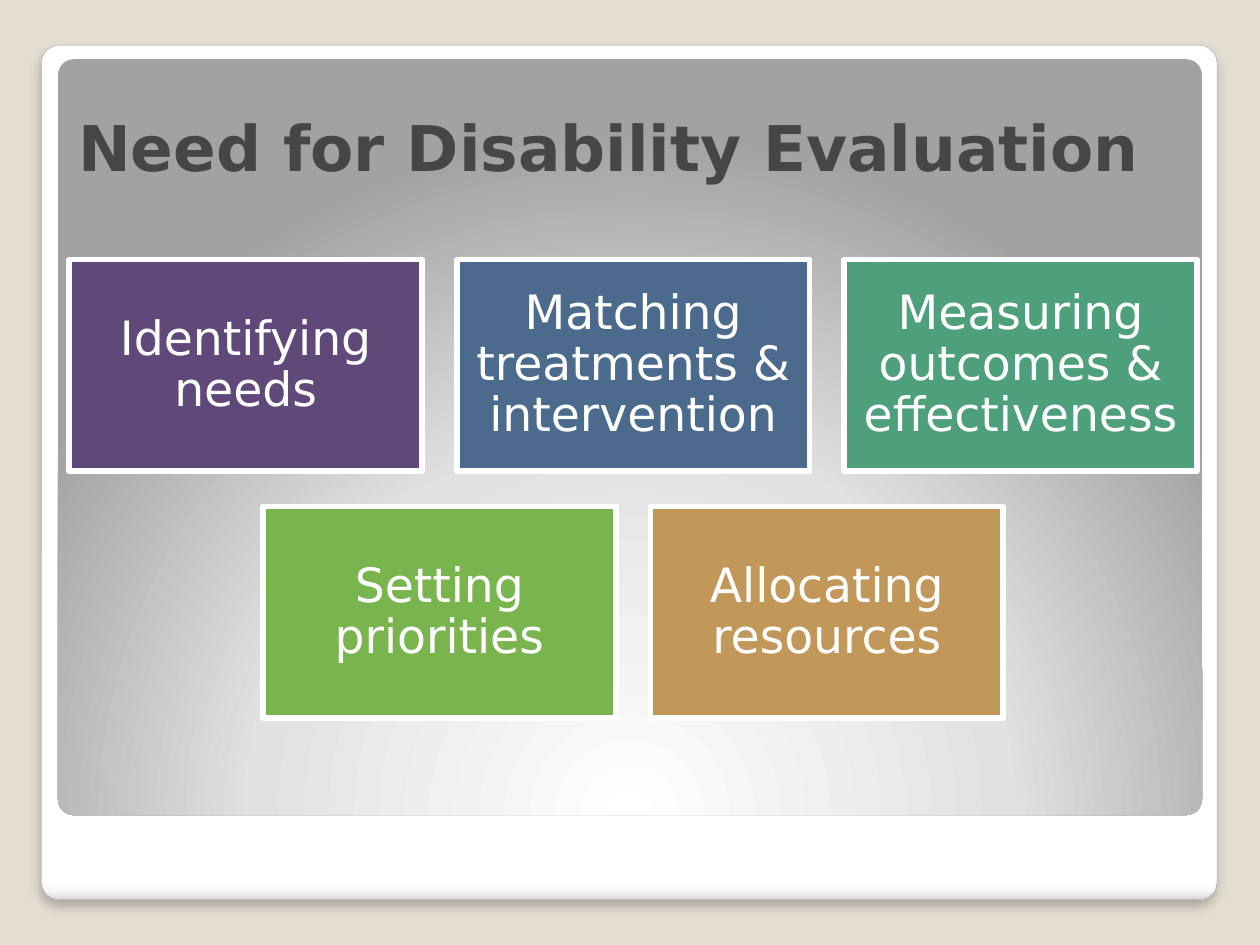
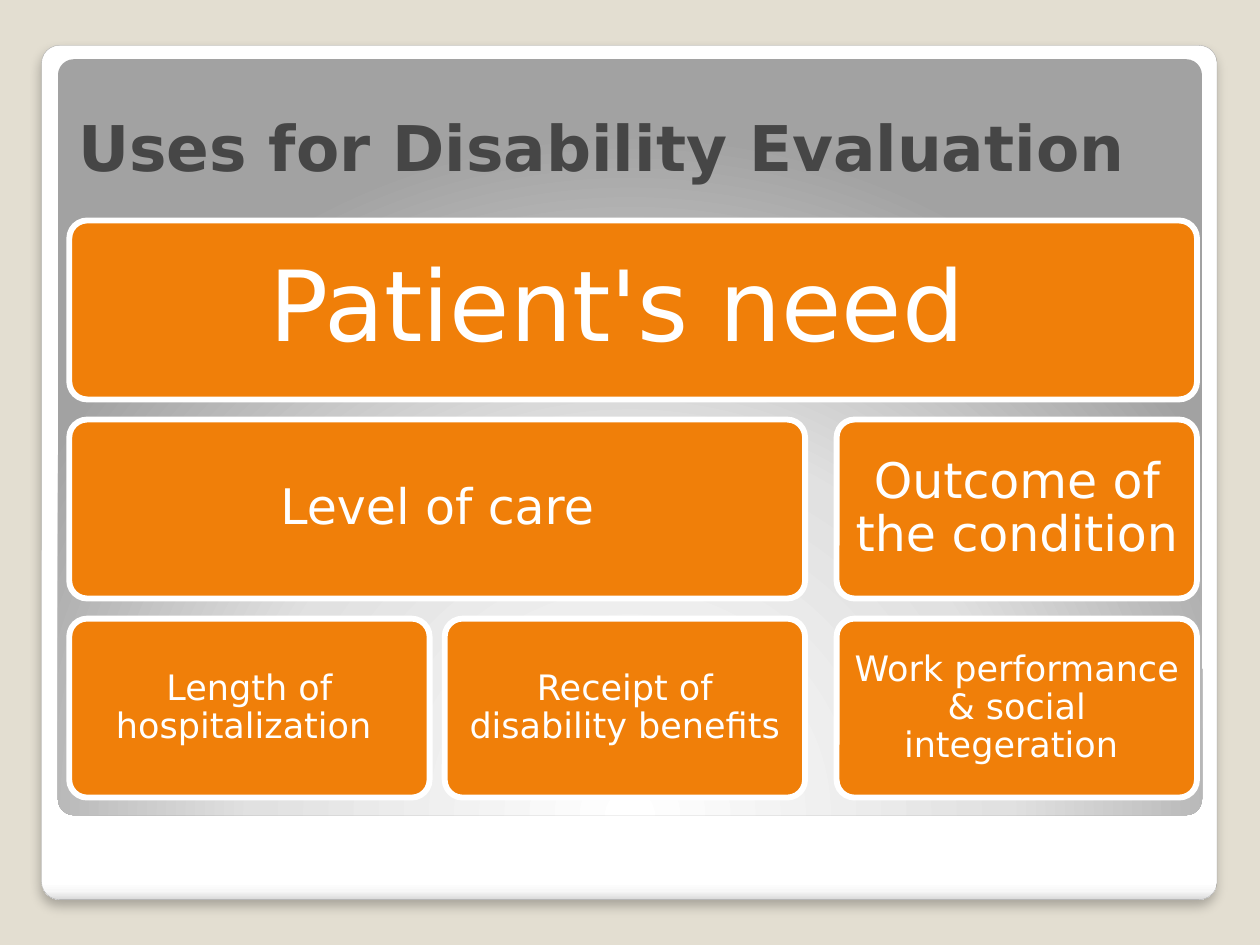
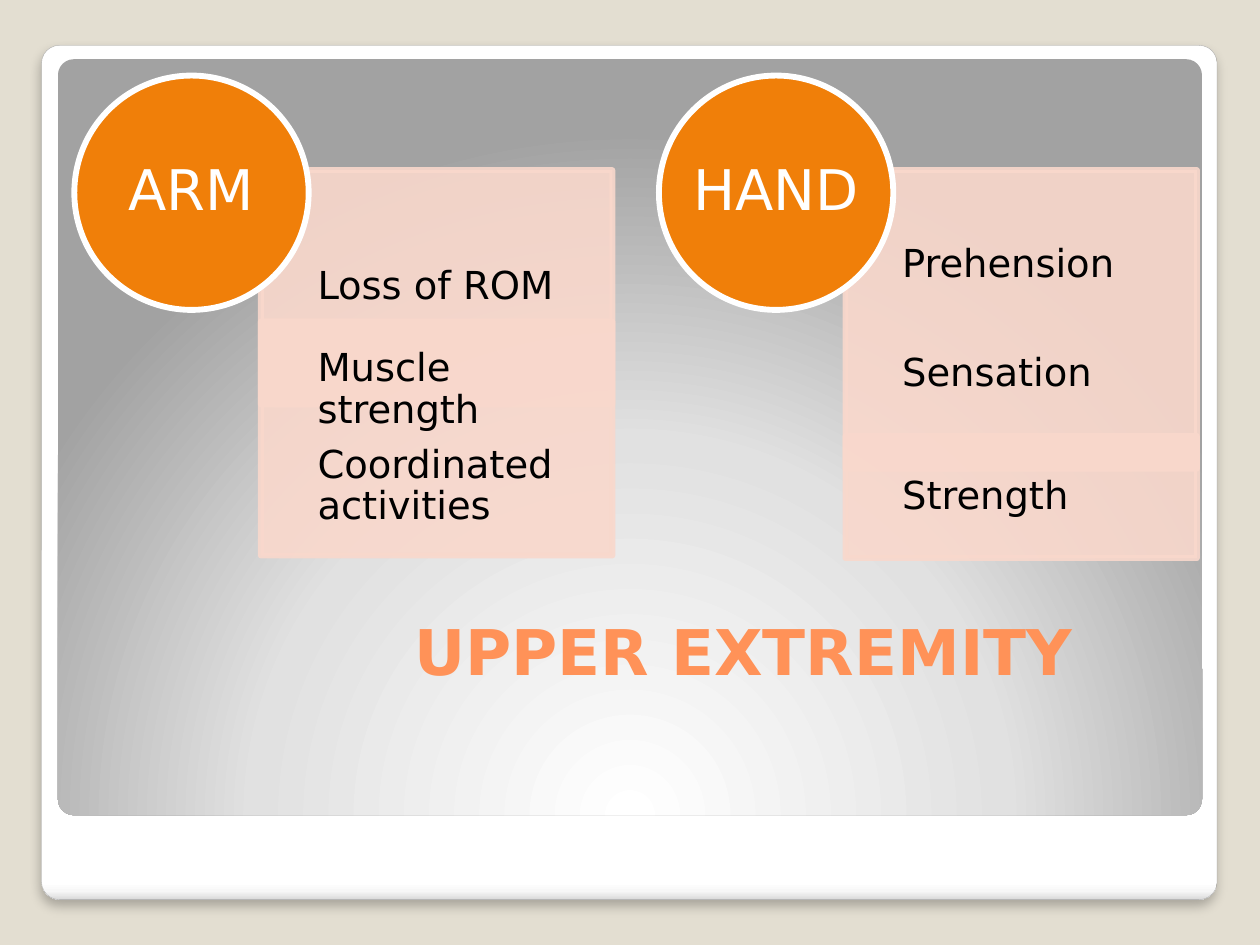
from lxml.etree import SubElement
from pptx import Presentation
from pptx.dml.color import RGBColor
from pptx.enum.shapes import MSO_SHAPE
from pptx.enum.text import MSO_ANCHOR, PP_ALIGN
from pptx.oxml import parse_xml
from pptx.oxml.ns import nsdecls, qn
from pptx.util import Inches, Pt

# Shared look
FONT = "DejaVu Sans"
SAND, WHITE, BLACK, GREY = "E3DED1", "FFFFFF", "000000", "464646"
ORANGE, PEACH, PINK = "F07F09", "FF9258", "F9D8CC"
EDGE = 3.35
LEFT = 0.55
HEAD = (LEFT, 0.33, 8.95, 1.15)

# Slide 1: rows of boxes
NEEDS = [
    [("Identifying needs", "604878"),
     ("Matching treatments & intervention", "4B6A8C"),
     ("Measuring outcomes & effectiveness", "4DA07B")],
    [("Setting priorities", "7AB44F"),
     ("Allocating resources", "C19859")],
]

# Slide 2: text, row, column, columns spanned
USES = [
    ("Patient's need ", 0, 0, 3),
    ("Level of care", 1, 0, 2),
    ("Length of hospitalization ", 2, 0, 1),
    ("Receipt of disability benefits", 2, 1, 1),
    ("Outcome of the condition", 1, 2, 1),
    ("Work performance & social integeration ", 2, 2, 1),
]
TIERS = [(56, 0.19), (28, 0.08), (20, 0.04)]  # text size, inset

# Slide 3: limb, then panels of top, height, space after, lines
LIMBS = [
    ("ARM", [(1.35, 1.86, 7.7, ["Loss of ROM"]),
             (2.55, 1.86, 7.7, ["Muscle strength", "Coordinated activities"])]),
    ("HAND", [(1.35, 2.37, 38.5, ["Prehension", "Sensation"]),
              (3.46, 0.97, 7.7, ["Strength"])]),
]


def tint(fill, code, alpha=100):
    fill.solid()
    fill.fore_color.rgb = RGBColor.from_string(code)
    if alpha < 100:
        node = fill._xPr.find(qn("a:solidFill"))[0]
        SubElement(node, qn("a:alpha"), val=str(alpha * 1000))


def blend(shape, stops, way):
    marks = "".join(f'<a:gs pos="{pos * 1000}"><a:srgbClr val="{code}"/></a:gs>'
                    for pos, code in stops)
    grad = parse_xml(f'<a:gradFill {nsdecls("a")} rotWithShape="1">'
                     f'<a:gsLst>{marks}</a:gsLst>{way}</a:gradFill>')
    shape._element.spPr.insert(2, grad)


def write(shape, lines, size, color, align=PP_ALIGN.CENTER, inset=(0, 0, 0, 0),
          bold=False, anchor=MSO_ANCHOR.MIDDLE, wrap=True, gap=None, pitch=0.9):
    frame = shape.text_frame
    frame.word_wrap = wrap
    frame.vertical_anchor = anchor
    (frame.margin_left, frame.margin_top,
     frame.margin_right, frame.margin_bottom) = map(Inches, inset)
    for i, line in enumerate(lines):
        para = frame.add_paragraph() if i else frame.paragraphs[0]
        para.alignment = align
        para.line_spacing = pitch
        last = i == len(lines) - 1
        para.space_after = Pt(size * 0.35 if last or gap is None else gap)
        run = para.add_run()
        run.text = line
        font = run.font
        font.name, font.size, font.bold = FONT, Pt(size), bold
        tint(font.fill, color)


def block(slide, kind, box, fill=None, line=None, width=EDGE, alpha=100, curve=None):
    shape = slide.shapes.add_shape(kind, *map(Inches, box))
    shape.shadow.inherit = False
    if curve is not None:
        shape.adjustments[0] = curve
    if fill:
        tint(shape.fill, fill, alpha)
    if line:
        tint(shape.line.fill, line, alpha)
        shape.line.width = Pt(width)
    else:
        shape.line.fill.background()
    return shape


def start(deck, title, box=HEAD, color=GREY):
    slide = deck.slides.add_slide(deck.slide_layouts[6])
    tint(slide.background.fill, SAND)
    # White card with a soft shadow
    card = block(slide, MSO_SHAPE.ROUNDED_RECTANGLE, (0.33, 0.36, 9.33, 6.78),
                 line="A4A4A4", width=0.16, curve=0.021)
    blend(card, [(0, WHITE), (98, WHITE), (99, "F7F7F7"), (100, "DADADA")],
          '<a:lin ang="5400000" scaled="0"/>')
    glow = SubElement(card._element.spPr.find(qn("a:effectLst")), qn("a:outerShdw"),
                      blurRad=str(Pt(6)), dist=str(Pt(4)), dir="5400000",
                      algn="t", rotWithShape="0")
    shade = SubElement(glow, qn("a:srgbClr"), val=BLACK)
    SubElement(shade, qn("a:alpha"), val="25000")
    # Grey panel lit from below
    panel = block(slide, MSO_SHAPE.ROUNDED_RECTANGLE, (0.46, 0.47, 9.08, 6), curve=0.021)
    blend(panel, [(0, WHITE), (55, "E1E1E1"), (100, "A2A2A2")],
          '<a:path path="circle"><a:fillToRect l="50000" t="175000" '
          'r="50000" b="-75000"/></a:path>')
    # Title
    head = slide.shapes.add_textbox(*map(Inches, box))
    write(head, [title], 36, color, PP_ALIGN.LEFT, (0.07, 0.05, 0.07, 0.02),
          bold=True, anchor=MSO_ANCHOR.BOTTOM, gap=0, pitch=1)
    head.text_frame.paragraphs[0].space_after = Pt(0)
    return slide


def needs(deck):
    slide = start(deck, "Need for Disability Evaluation")
    wide, high, step, drop = 2.8, 1.68, 3.075, 1.96
    for r, row in enumerate(NEEDS):
        left = LEFT + (3 - len(row)) * step / 2
        for c, (text, color) in enumerate(row):
            box = (left + c * step, 2.06 + r * drop, wide, high)
            tile = block(slide, MSO_SHAPE.RECTANGLE, box, color, WHITE)
            write(tile, [text], 27, WHITE, inset=[0.11] * 4)


def uses(deck):
    slide = start(deck, "Uses for Disability Evaluation")
    cols, wide, high, drop = (LEFT, 3.53, 6.64), 2.86, 1.42, 1.58
    for text, row, col, span in USES:
        size, inset = TIERS[row]
        full = cols[col + span - 1] + wide - cols[col]
        box = (cols[col], 1.75 + row * drop, full, high)
        tile = block(slide, MSO_SHAPE.ROUNDED_RECTANGLE, box, ORANGE, WHITE, curve=0.1)
        write(tile, [text], size, WHITE, inset=[inset] * 4)


def limbs(deck):
    slide = start(deck, "UPPER EXTREMITY", (3.22, 4.5, 5.95, 0.98), PEACH)
    step, disc = 4.64, 1.86
    for i, (limb, panels) in enumerate(LIMBS):
        for top, high, gap, lines in panels:
            box = (2.07 + i * step, top, 2.79, high)
            panel = block(slide, MSO_SHAPE.RECTANGLE, box, PINK, PINK, alpha=90)
            write(panel, lines, 22, BLACK, PP_ALIGN.LEFT, (0.45, 0.17, 0.17, 0.17), gap=gap)
        ball = block(slide, MSO_SHAPE.OVAL, (0.59 + i * step, 0.6, disc, disc), ORANGE, WHITE)
        write(ball, [limb], 32, WHITE, wrap=False)


def main():
    deck = Presentation()
    deck.slide_width, deck.slide_height = Inches(10), Inches(7.5)
    for build in (needs, uses, limbs):
        build(deck)
    deck.save("out.pptx")


if __name__ == "__main__":
    main()
